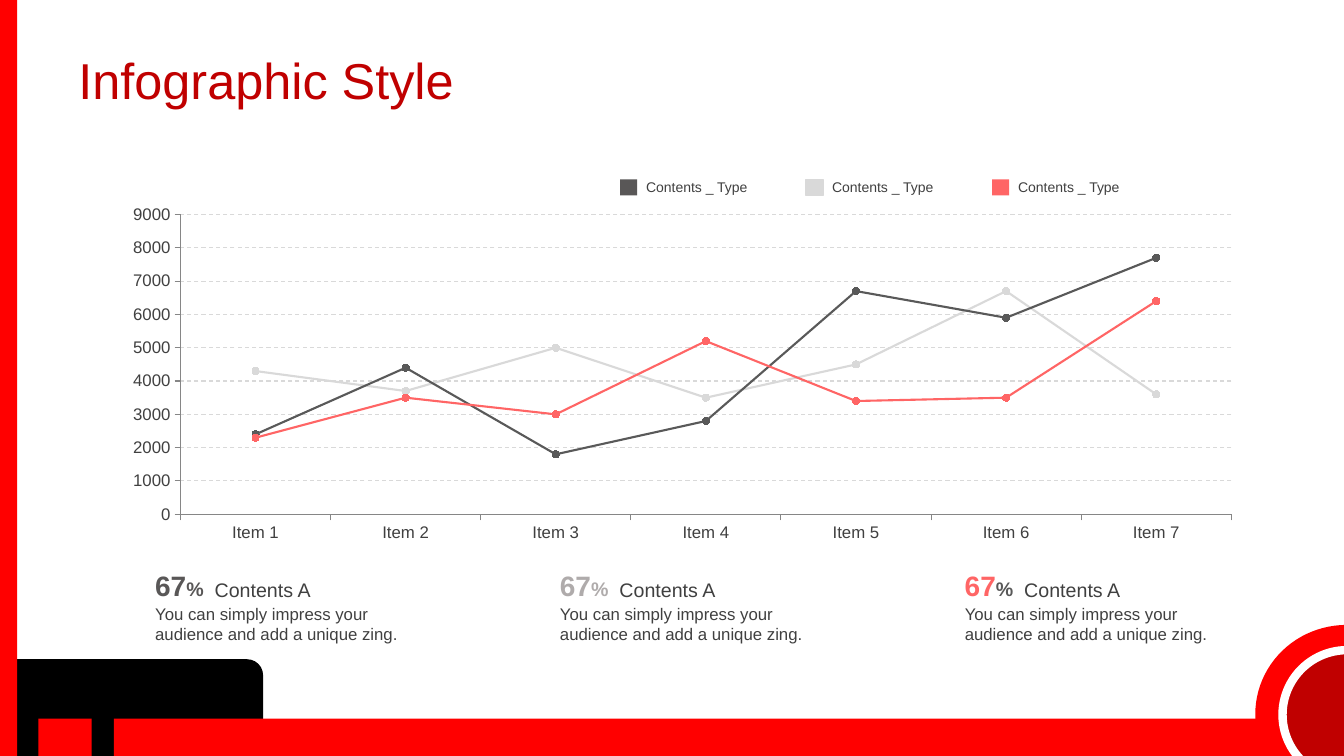
import pptx
import pptx.util
import pptx.chart.data
import pptx.dml.color
import pptx.enum.chart
import pptx.enum.dml
import pptx.enum.shapes
import pptx.enum.text
import pptx.oxml

Inches, Pt = pptx.util.Inches, pptx.util.Pt
MSO = pptx.enum.shapes.MSO_SHAPE
ANCHOR = pptx.enum.text.MSO_ANCHOR

FONT = "Arial"
RED, DARK_RED, TEXT = "FF0000", "C00000", "404040"
TITLE = "Infographic Style"

FRAME = [
    (MSO.ROUNDED_RECTANGLE, (0, 6.54, 2.61, 0.96), "000000", None),
    (MSO.RECTANGLE, (1.13, 7.13, 12.2, 0.37), RED, None),
    (MSO.OVAL, (12.45, 6.2, 1.81, 1.77), RED, None),
    (MSO.RECTANGLE, (0.38, 7.13, 0.53, 0.37), RED, None),
    (MSO.RECTANGLE, (0, 0, 0.17, 7.5), RED, None),
    (MSO.OVAL, (12.72, 6.45, 1.28, 1.28), DARK_RED, ("FFFFFF", 6)),
]

CATEGORIES = [f"Item {n}" for n in range(1, 8)]
SERIES = [
    ("Series 1", "D9D9D9", (4300, 3700, 5000, 3500, 4500, 6700, 3600)),
    ("Series 2", "595959", (2400, 4400, 1800, 2800, 6700, 5900, 7700)),
    ("Series 3", "FF6565", (2300, 3500, 3000, 5200, 3400, 3500, 6400)),
]

LEGEND = [
    ("Contents _ Type", "595757", None),
    ("Contents _ Type", "D9D9D9", ("D9D9D9", 1)),
    ("Contents _ Type", "FF6565", None),
]

BODY = "You can simply impress your audience and add a unique zing."
FACTS = [
    ("67", "595757", "595757", "Contents A", BODY),
    ("67", "AFABAB", "AFABAB", "Contents A", BODY),
    ("67", "FF6565", "595959", "Contents A", BODY),
]


def rgb(value):
    return pptx.dml.color.RGBColor.from_string(value)


def set_line(line, color, width):
    line.color.rgb = rgb(color)
    line.width = Pt(width)


def add_block(s, kind, box, fill, outline=None):
    sp = s.shapes.add_shape(kind, *map(Inches, box))
    sp.shadow.inherit = False
    sp.fill.solid()
    sp.fill.fore_color.rgb = rgb(fill)
    if outline:
        set_line(sp.line, *outline)
    else:
        sp.line.fill.background()


def add_text(s, box, runs, anchor=ANCHOR.MIDDLE):
    tf = s.shapes.add_textbox(*map(Inches, box)).text_frame
    tf.word_wrap = True
    tf.vertical_anchor = anchor
    p = tf.paragraphs[0]
    for text, size, color, bold in runs:
        r = p.add_run()
        r.text = text
        r.font.name = FONT
        r.font.size = Pt(size)
        r.font.bold = bold
        r.font.color.rgb = rgb(color)


def set_plot_area(chart, x, y, w, h):
    ns = "http://schemas.openxmlformats.org/drawingml/2006/chart"
    plot_area = chart._chartSpace.chart.plotArea
    for old in plot_area.findall(f"{{{ns}}}layout"):
        plot_area.remove(old)
    plot_area.insert(0, pptx.oxml.parse_xml(
        f'<c:layout xmlns:c="{ns}"><c:manualLayout><c:layoutTarget val="inner"/>'
        '<c:xMode val="edge"/><c:yMode val="edge"/>'
        f'<c:x val="{x}"/><c:y val="{y}"/><c:w val="{w}"/><c:h val="{h}"/>'
        '</c:manualLayout></c:layout>'))


def add_line_chart(s):
    data = pptx.chart.data.CategoryChartData()
    data.categories = CATEGORIES
    for name, color, values in SERIES:
        data.add_series(name, values)
    chart = s.shapes.add_chart(
        pptx.enum.chart.XL_CHART_TYPE.LINE_MARKERS,
        *map(Inches, (1.11, 1.99, 11.33, 3.46)), data).chart
    chart.has_legend = False
    chart.has_title = False
    chart.font.name = FONT
    chart.font.size = Pt(12)
    chart.font.color.rgb = rgb(TEXT)
    chart.plots[0].vary_by_categories = False
    set_plot_area(chart, 0.06, 0.04, 0.92, 0.86)

    for axis in (chart.category_axis, chart.value_axis):
        axis.major_tick_mark = pptx.enum.chart.XL_TICK_MARK.OUTSIDE
        axis.minor_tick_mark = pptx.enum.chart.XL_TICK_MARK.NONE
        set_line(axis.format.line, "868686", 0.75)
    axis = chart.value_axis
    axis.minimum_scale, axis.maximum_scale, axis.major_unit = 0, 9000, 1000
    axis.has_major_gridlines = True
    grid = axis.major_gridlines.format.line
    set_line(grid, "D9D9D9", 0.75)
    grid.dash_style = pptx.enum.dml.MSO_LINE.DASH

    for series, (name, color, values) in zip(chart.plots[0].series, SERIES):
        series.smooth = False
        set_line(series.format.line, color, 1.5)
        marker = series.marker
        marker.style = pptx.enum.chart.XL_MARKER_STYLE.CIRCLE
        marker.size = 5
        marker.format.fill.solid()
        marker.format.fill.fore_color.rgb = rgb(color)
        marker.format.line.fill.background()


def main():
    prs = pptx.Presentation()
    prs.slide_width, prs.slide_height = Inches(13.33), Inches(7.5)
    s = prs.slides.add_slide(prs.slide_layouts[6])

    for block in FRAME:
        add_block(s, *block)
    add_text(s, (0.68, 0.44, 12.65, 0.92), [(TITLE, 36, DARK_RED, False)], ANCHOR.TOP)
    add_line_chart(s)

    for i, (number, color, sign_color, heading, body) in enumerate(FACTS):
        x = 1.44 + 4.015 * i
        add_text(s, (x, 5.59, 0.87, 0.44),
                 [(number, 20, color, True), ("%", 14, sign_color, True)])
        add_text(s, (x + 0.59, 5.68, 2.09, 0.34), [(heading, 14, TEXT, False)])
        add_text(s, (x, 5.94, 2.68, 0.5), [(body, 12, TEXT, False)], ANCHOR.TOP)

    for i, (label, color, outline) in enumerate(LEGEND):
        x = 6.15 + 1.845 * i
        add_block(s, MSO.RECTANGLE, (x, 1.78, 0.17, 0.16), color, outline)
        add_text(s, (x + 0.16, 1.72, 1.43, 0.27), [(label, 10, TEXT, False)])

    prs.save("out.pptx")


if __name__ == "__main__":
    main()
